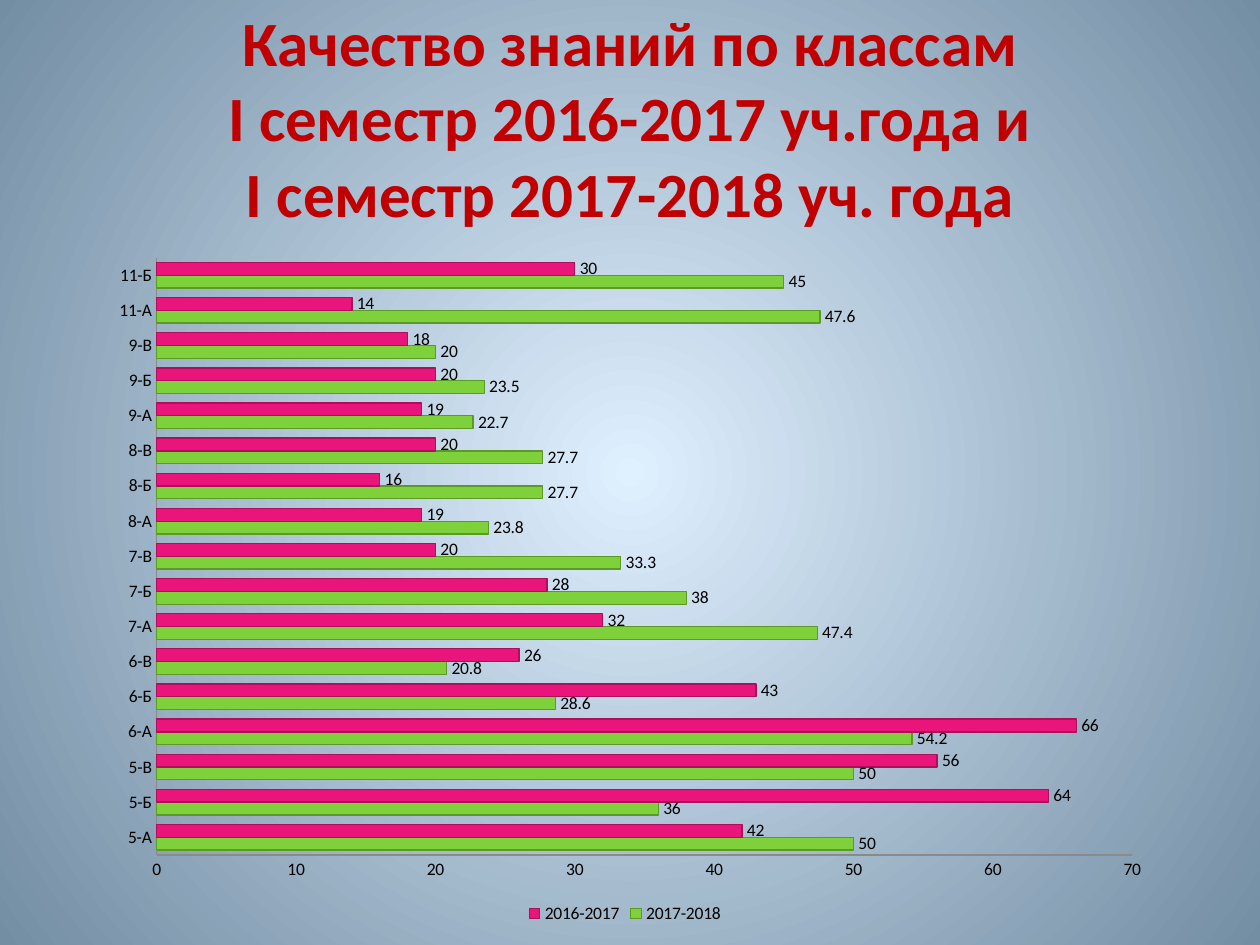
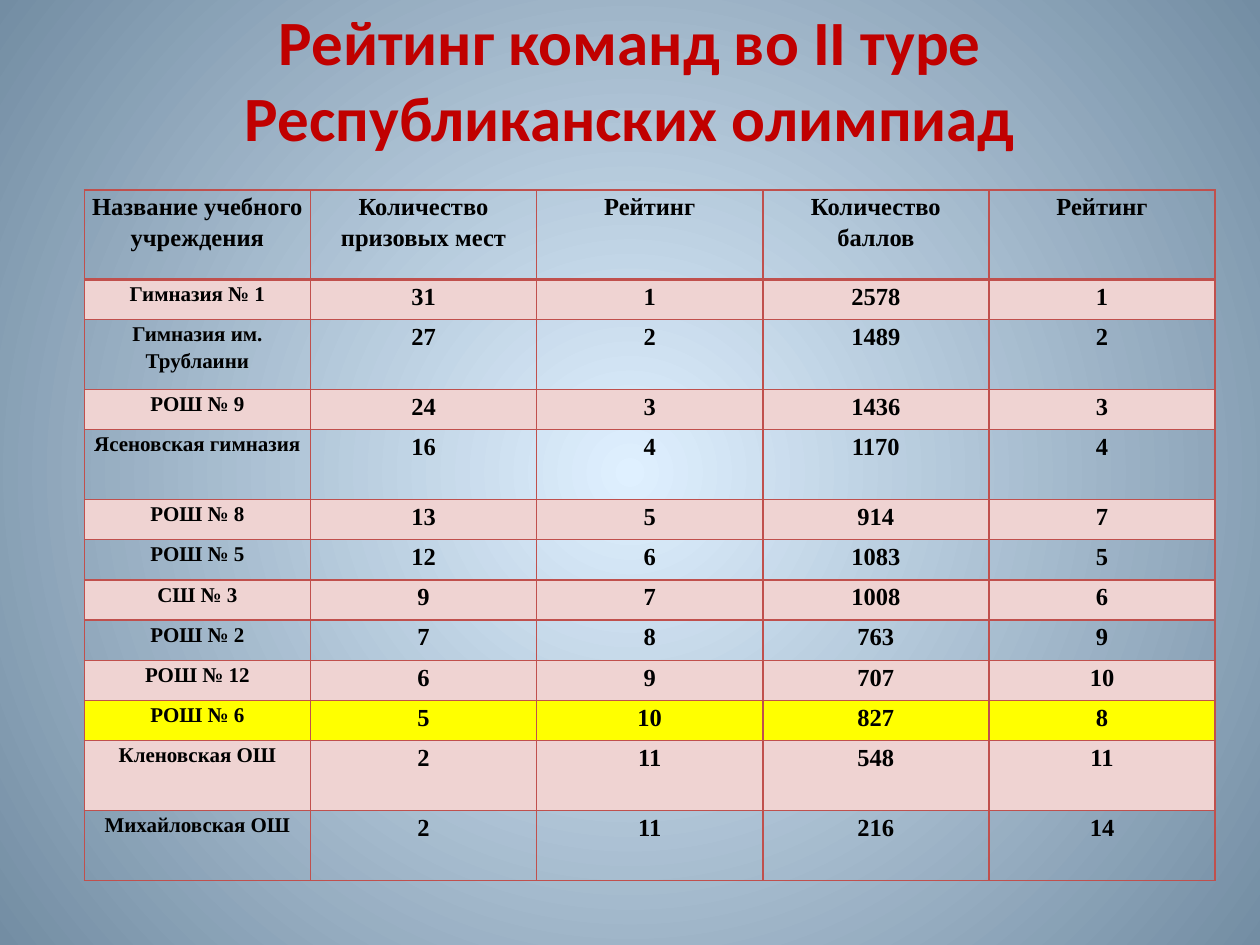
from lxml import etree
from pptx import Presentation
from pptx import util as u
from pptx.chart.data import CategoryChartData
from pptx.dml.color import RGBColor
from pptx.enum import chart as charts, text
from pptx.oxml import ns

BLACK = RGBColor(0x00, 0x00, 0x00)
TITLE_RED = RGBColor(0xC0, 0x00, 0x00)
GLOW = RGBColor(0xDF, 0xF0, 0xFF)
STEEL = RGBColor(0x73, 0x8D, 0xA3)
AXIS_GREY = RGBColor(0x8A, 0x8A, 0x8A)
GREEN = RGBColor(0x7F, 0xD1, 0x3B)
DARK_GREEN = RGBColor(0x5B, 0x9B, 0x25)
PINK = RGBColor(0xEA, 0x15, 0x7A)
DARK_PINK = RGBColor(0xAD, 0x0F, 0x5A)
BORDER_RED = RGBColor(0xC0, 0x50, 0x4D)
BAND_PINK = RGBColor(0xEF, 0xD3, 0xD2)
YELLOW = RGBColor(0xFF, 0xFF, 0x00)

TITLE_FONT = {"name": "Calibri", "size": u.Pt(36), "bold": True}
CHART_FONT = {"name": "Calibri", "size": u.Pt(10)}
CELL_FONT = {"name": "Times New Roman", "bold": True}


def set_font(font, values, color):
    for name, value in values.items():
        setattr(font, name, value)
    font.color.rgb = color


def add_titled_slide(title_text, bottom_inset):
    slide = presentation.slides.add_slide(presentation.slide_layouts[5])
    title = slide.shapes.title
    title.left, title.top, title.width, title.height = (
        u.Cm(1.27), u.Cm(0.76), u.Cm(22.86), u.Cm(3.18))
    frame = title.text_frame
    frame.text = title_text
    frame.auto_size = text.MSO_AUTO_SIZE.NONE
    frame.vertical_anchor = text.MSO_ANCHOR.MIDDLE
    frame.margin_bottom = bottom_inset
    paragraph = frame.paragraphs[0]
    paragraph.alignment = text.PP_ALIGN.CENTER
    for run in paragraph.runs:
        set_font(run.font, TITLE_FONT, TITLE_RED)
    return slide


presentation = Presentation()
presentation.slide_width, presentation.slide_height = u.Cm(25.4), u.Cm(19.05)

# Radial background shared through the master
master = presentation.slide_master
background = master.background.fill
background.gradient()
for stop, color, position in zip(background.gradient_stops, (GLOW, STEEL), (0, 1)):
    stop.color.rgb = color
    stop.position = position
gradient = master.element.find(".//" + ns.qn("a:gradFill"))
for linear in gradient.findall(ns.qn("a:lin")):
    gradient.remove(linear)
radial = etree.SubElement(gradient, ns.qn("a:path"), {"path": "circle"})
etree.SubElement(radial, ns.qn("a:fillToRect"), dict.fromkeys("ltrb", "50000"))

# Slide 1: quality of knowledge by class
slide = add_titled_slide(
    "Качество знаний по классам\vI семестр 2016-2017 уч.года и\v"
    "I семестр 2017-2018 уч. года", u.Cm(0.13))

chart_data = CategoryChartData()
chart_data.categories = [
    "5-А", "5-Б", "5-В", "6-А", "6-Б", "6-В", "7-А", "7-Б", "7-В",
    "8-А", "8-Б", "8-В", "9-А", "9-Б", "9-В", "11-А", "11-Б"]
chart_data.add_series("2017-2018", [
    50, 36, 50, 54.2, 28.6, 20.8, 47.4, 38, 33.3,
    23.8, 27.7, 27.7, 22.7, 23.5, 20, 47.6, 45])
chart_data.add_series("2016-2017", [
    42, 64, 56, 66, 43, 26, 32, 28, 20, 19, 16, 20, 19, 20, 18, 14, 30])
chart = slide.shapes.add_chart(
    charts.XL_CHART_TYPE.BAR_CLUSTERED,
    u.Cm(1.7), u.Cm(4.72), u.Cm(21.8), u.Cm(14), chart_data).chart
set_font(chart.font, CHART_FONT, BLACK)
chart.has_title = False
chart.has_legend = True
chart.legend.position = charts.XL_LEGEND_POSITION.BOTTOM
chart.legend.include_in_layout = False

for axis in (chart.category_axis, chart.value_axis):
    axis.has_major_gridlines = False
    axis.major_tick_mark = axis.minor_tick_mark = charts.XL_TICK_MARK.NONE
    axis.format.line.color.rgb = AXIS_GREY
    axis.format.line.width = u.Pt(0.75)
chart.value_axis.minimum_scale = 0
chart.value_axis.maximum_scale = 70
chart.value_axis.major_unit = 10

plot = chart.plots[0]
plot.gap_width = 75
plot.overlap = 0
plot.vary_by_categories = False
for series, fill, outline in zip(plot.series, (GREEN, PINK), (DARK_GREEN, DARK_PINK)):
    series.format.fill.solid()
    series.format.fill.fore_color.rgb = fill
    series.format.line.color.rgb = outline
    series.format.line.width = u.Pt(0.75)
    labels = series.data_labels
    labels.show_value = True
    labels.position = charts.XL_LABEL_POSITION.OUTSIDE_END
    set_font(labels.font, CHART_FONT, BLACK)

plot_area = chart.element.find(".//" + ns.qn("c:plotArea"))
for layout in plot_area.findall(ns.qn("c:layout")):
    plot_area.remove(layout)
layout = etree.Element(ns.qn("c:layout"))
manual = etree.SubElement(layout, ns.qn("c:manualLayout"))
for tag, value in {"layoutTarget": "inner", "xMode": "edge", "yMode": "edge",
                   "x": "0.067", "y": "0.034", "w": "0.902", "h": "0.86"}.items():
    etree.SubElement(manual, ns.qn("c:" + tag), {"val": value})
plot_area.insert(0, layout)

# Slide 2: team rating; the deep inset lifts the two-line title
slide = add_titled_slide(
    "Рейтинг команд во II туре Республиканских олимпиад", u.Cm(1.67))

ratings = [
    ("Название учебного учреждения", "Количество призовых мест", "Рейтинг",
     "Количество баллов", "Рейтинг"),
    ("Гимназия № 1", 31, 1, 2578, 1),
    ("Гимназия им. Трублаини", 27, 2, 1489, 2),
    ("РОШ № 9", 24, 3, 1436, 3),
    ("Ясеновская гимназия", 16, 4, 1170, 4),
    ("РОШ № 8", 13, 5, 914, 7),
    ("РОШ № 5", 12, 6, 1083, 5),
    ("СШ № 3", 9, 7, 1008, 6),
    ("РОШ № 2", 7, 8, 763, 9),
    ("РОШ № 12", 6, 9, 707, 10),
    ("РОШ № 6", 5, 10, 827, 8),
    ("Кленовская ОШ", 2, 11, 548, 11),
    ("Михайловская ОШ", 2, 11, 216, 14),
]
HIGHLIGHTED_ROW = 10
TALL_ROWS = (2, 4, 11, 12)
row_heights = [u.Cm(1.8)] + [
    u.Cm(1.41 if row in TALL_ROWS else 0.81) for row in range(1, len(ratings))]

table = slide.shapes.add_table(
    len(ratings), 5, u.Cm(1.7), u.Cm(3.83), u.Cm(22.8), sum(row_heights)).table
table.first_row = table.horz_banding = False
for column in table.columns:
    column.width = u.Cm(4.56)
for row, values in enumerate(ratings):
    table.rows[row].height = row_heights[row]
    for column, value in enumerate(values):
        cell = table.cell(row, column)
        cell.margin_left = cell.margin_right = u.Cm(0.15)
        cell.margin_top = cell.margin_bottom = 0
        cell.text = str(value)
        paragraph = cell.text_frame.paragraphs[0]
        paragraph.alignment = text.PP_ALIGN.CENTER
        paragraph.line_spacing = 1.15
        font = paragraph.runs[0].font
        set_font(font, CELL_FONT, BLACK)
        font.size = u.Pt(12 if row and column == 0 else 14)

        borders = cell._tc.get_or_add_tcPr()
        for side in "LRTB":
            under_header = (row, side) in ((0, "B"), (1, "T"))
            line = etree.SubElement(borders, ns.qn("a:ln" + side), {
                "w": str(u.Pt(2.25 if under_header else 1))})
            solid = etree.SubElement(line, ns.qn("a:solidFill"))
            etree.SubElement(solid, ns.qn("a:srgbClr"), {"val": str(BORDER_RED)})
        if row == HIGHLIGHTED_ROW or row % 2:
            cell.fill.solid()
            cell.fill.fore_color.rgb = YELLOW if row == HIGHLIGHTED_ROW else BAND_PINK
        else:
            cell.fill.background()

presentation.save("out.pptx")
